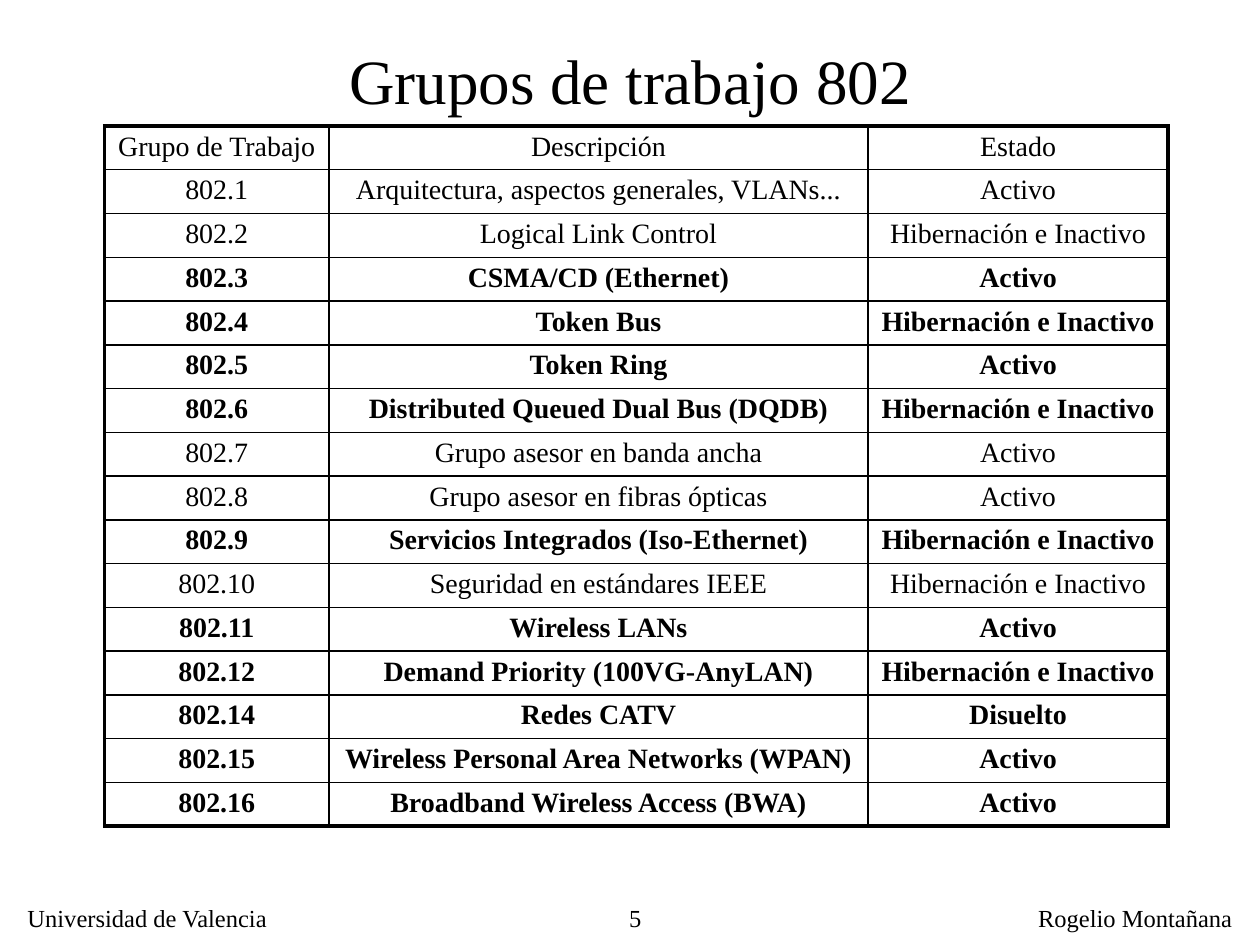
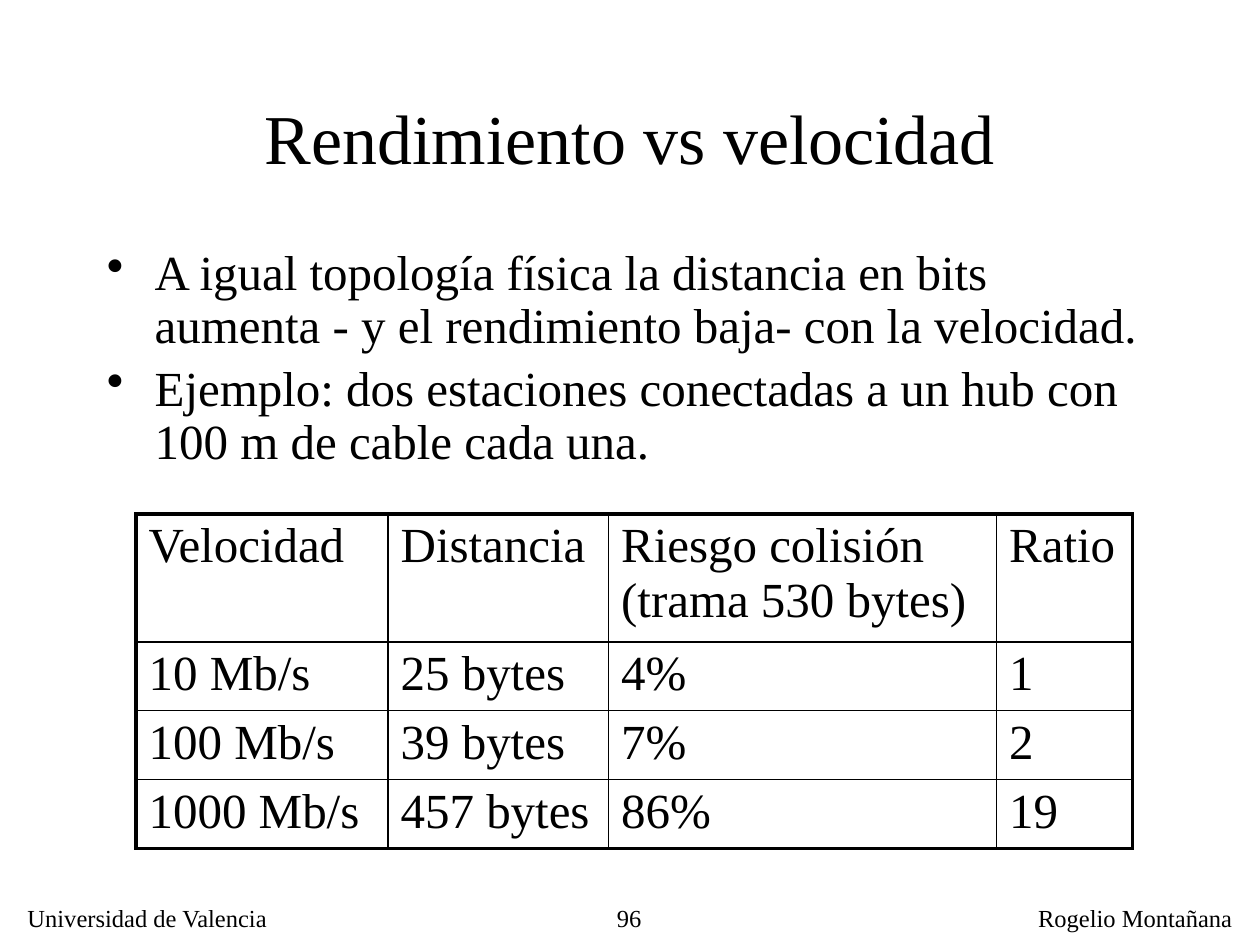
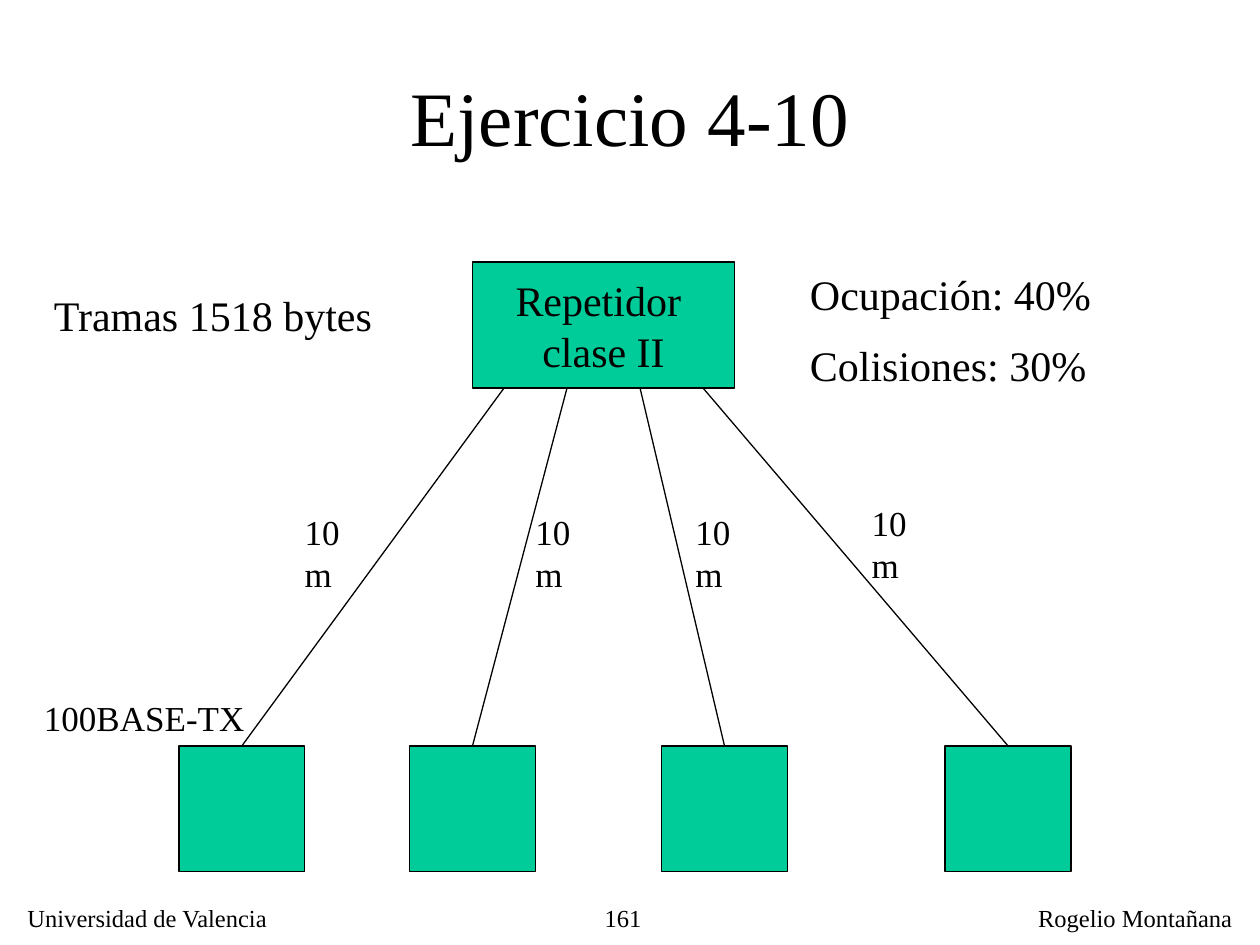
import pptx
import pptx.dml.color
import pptx.enum.shapes
import pptx.enum.text
import pptx.oxml.ns
import pptx.util
from lxml import etree

Inches, Pt = pptx.util.Inches, pptx.util.Pt
RGBColor = pptx.dml.color.RGBColor
PP_ALIGN = pptx.enum.text.PP_ALIGN
MSO_ANCHOR = pptx.enum.text.MSO_ANCHOR
qn = pptx.oxml.ns.qn

FONT = "Times New Roman"
BLACK = RGBColor(0x00, 0x00, 0x00)
GREEN = RGBColor(0x00, 0xCC, 0x99)
THIN, THICK = 1, 2.25

UNIVERSITY, AUTHOR = "Universidad de Valencia", "Rogelio Montañana"

ACTIVE, HIBERNATING = "Activo", "Hibernación e Inactivo"
GROUPS = [
    ("Grupo de Trabajo", "Descripción", "Estado"),
    ("802.1", "Arquitectura, aspectos generales, VLANs...", ACTIVE),
    ("802.2", "Logical Link Control", HIBERNATING),
    ("802.3", "CSMA/CD (Ethernet)", ACTIVE),
    ("802.4", "Token Bus", HIBERNATING),
    ("802.5", "Token Ring", ACTIVE),
    ("802.6", "Distributed Queued Dual Bus (DQDB)", HIBERNATING),
    ("802.7", "Grupo asesor en banda ancha", ACTIVE),
    ("802.8", "Grupo asesor en fibras ópticas", ACTIVE),
    ("802.9", "Servicios Integrados (Iso-Ethernet)", HIBERNATING),
    ("802.10", "Seguridad en estándares IEEE", HIBERNATING),
    ("802.11", "Wireless LANs", ACTIVE),
    ("802.12", "Demand Priority (100VG-AnyLAN)", HIBERNATING),
    ("802.14", "Redes CATV", "Disuelto"),
    ("802.15", "Wireless Personal Area Networks (WPAN)", ACTIVE),
    ("802.16", "Broadband Wireless Access (BWA)", ACTIVE),
]
PLAIN_GROUPS = {"Grupo de Trabajo", "802.1", "802.2", "802.7", "802.8", "802.10"}

BULLETS = [
    "A igual topología física la distancia en bits aumenta - y el rendimiento baja- con la velocidad.",
    "Ejemplo: dos estaciones conectadas a un hub con 100 m de cable cada una.",
]
SPEEDS = [
    ("Velocidad", "Distancia", "Riesgo colisión (trama 530 bytes)", "Ratio"),
    ("10 Mb/s", "25 bytes", "4%", "1"),
    ("100 Mb/s", "39 bytes", "7%", "2"),
    ("1000 Mb/s", "457 bytes", "86%", "19"),
]

REPEATER = ["Repetidor ", "clase II"]
# station left, cable end under the repeater, cable label left and top
STATIONS = [
    (1.42, 4, 2.32, 4),
    (3.25, 4.5, 4.15, 4),
    (5.25, 5.08, 5.42, 4),
    (7.5, 5.58, 6.82, 3.93),
]
STATION_TOP, REPEATER_BOTTOM = 5.92, 3.08


def write(tf, lines, size, align=PP_ALIGN.LEFT, bold=False, before=0):
    for i, line in enumerate(lines):
        p = tf.paragraphs[0] if i == 0 else tf.add_paragraph()
        p.alignment = align
        p.space_before = Pt(before)
        r = p.add_run()
        r.text = line
        r.font.name, r.font.size, r.font.bold = FONT, Pt(size), bold
        r.font.color.rgb = BLACK


def add_text(s, box, lines, size, wrap=False, anchor=MSO_ANCHOR.TOP, **style):
    tf = s.shapes.add_textbox(*map(Inches, box)).text_frame
    tf.word_wrap = wrap
    tf.vertical_anchor = anchor
    write(tf, lines, size, **style)
    return tf


def add_slide(prs, number, title, size, top, height):
    """Add a slide with its centred title and the footer."""
    s = prs.slides.add_slide(prs.slide_layouts[6])
    add_text(s, (4.13, 7.12, 1.06, 0.31), [number], 14, wrap=True, align=PP_ALIGN.RIGHT)
    add_text(s, (0.12, 7.12, 2.13, 0.33), [UNIVERSITY], 14)
    add_text(s, (8.14, 7.12, 1.74, 0.33), [AUTHOR], 14)
    add_text(s, (0.75, top, 8.5, height), [title], size, wrap=True,
             anchor=MSO_ANCHOR.MIDDLE, align=PP_ALIGN.CENTER)
    return s


def set_border(cell, side, width):
    ln = etree.SubElement(cell._tc.get_or_add_tcPr(), qn("a:ln" + side), w=str(Pt(width)))
    fill = etree.SubElement(ln, qn("a:solidFill"))
    etree.SubElement(fill, qn("a:srgbClr"), val=str(BLACK))


def add_grid(s, left, top, widths, heights, rows, size, align, bold_row):
    """Add an unfilled table with a thick frame and thin inner lines."""
    last_row, last_col = len(rows) - 1, len(widths) - 1
    table = s.shapes.add_table(len(rows), len(widths), Inches(left), Inches(top),
                               Inches(sum(widths)), Inches(sum(heights))).table
    table.first_row = table.horz_banding = False
    for column, width in zip(table.columns, widths):
        column.width = Inches(width)
    for row, height in zip(table.rows, heights):
        row.height = Inches(height)
    for i, row in enumerate(rows):
        for j, text in enumerate(row):
            cell = table.cell(i, j)
            cell.margin_top = cell.margin_bottom = Inches(0.04)
            write(cell.text_frame, [text], size, align, bold_row(row))
            edges = {"L": j == 0, "R": j == last_col, "T": i == 0, "B": i == last_row}
            for side, outer in edges.items():
                set_border(cell, side, THICK if outer else THIN)
            cell.fill.background()


def add_box(s, *box):
    sp = s.shapes.add_shape(pptx.enum.shapes.MSO_SHAPE.RECTANGLE, *map(Inches, box))
    sp.shadow.inherit = False
    sp.fill.solid()
    sp.fill.fore_color.rgb = GREEN
    sp.line.color.rgb = BLACK
    sp.line.width = Pt(0.75)
    return sp


def add_cable(s, station, x, y):
    """Draw a line from the top of a station to a point."""
    line = s.shapes.add_connector(pptx.enum.shapes.MSO_CONNECTOR.STRAIGHT,
                                  0, 0, Inches(x), Inches(y))
    line.begin_connect(station, 0)
    line.line.color.rgb = BLACK
    line.line.width = Pt(0.75)
    etree.SubElement(line._element.spPr, qn("a:effectLst"))


def build_groups(prs):
    s = add_slide(prs, "5", "Grupos de trabajo 802", 36, 0.42, 0.42)
    heights = [5.56 / len(GROUPS)] * len(GROUPS)
    add_grid(s, 0.83, 1, (1.78, 4.28, 2.38), heights, GROUPS, 16, PP_ALIGN.CENTER,
             lambda row: row[0] not in PLAIN_GROUPS)


def build_speeds(prs):
    s = add_slide(prs, "96", "Rendimiento vs velocidad", 40, 0.67, 0.83)
    tf = add_text(s, (0.75, 1.92, 8.5, 2), BULLETS, 28, wrap=True, before=5.6)
    for p in tf.paragraphs:
        p.line_spacing = 0.9
        pPr = p._p.get_or_add_pPr()
        pPr.set("marL", str(Inches(0.38)))
        pPr.set("indent", str(-Inches(0.38)))
        etree.SubElement(pPr, qn("a:buChar"), char="•")
    add_grid(s, 1.08, 4.08, (2, 1.75, 3.08, 1.08), (0.96, 0.53, 0.53, 0.53), SPEEDS, 28,
             PP_ALIGN.LEFT, lambda row: False)


def build_exercise(prs):
    s = add_slide(prs, "161", "Ejercicio 4-10", 44, 0.5, 0.83)
    tf = add_box(s, 3.75, 2.08, 2.08, 1).text_frame
    tf.word_wrap = False
    tf.vertical_anchor = MSO_ANCHOR.MIDDLE
    write(tf, REPEATER, 24, PP_ALIGN.CENTER)
    for left, cable_end, label_left, label_top in STATIONS:
        station = add_box(s, left, STATION_TOP, 1, 1)
        add_cable(s, station, cable_end, REPEATER_BOTTOM)
        add_text(s, (label_left, label_top, 0.76, 0.43), ["10 m"], 20)
    add_text(s, (0.25, 5.48, 1.79, 0.43), ["100BASE-TX"], 20)
    add_text(s, (6.33, 2.08, 2.67, 1.1), ["Ocupación: 40%", "Colisiones: 30%"], 24,
             wrap=True, before=12)
    add_text(s, (0.33, 2.25, 2.83, 0.5), ["Tramas 1518 bytes"], 24, wrap=True, before=12)


def main():
    prs = pptx.Presentation()
    prs.slide_width, prs.slide_height = Inches(10), Inches(7.5)
    build_groups(prs)
    build_speeds(prs)
    build_exercise(prs)
    prs.save("out.pptx")


if __name__ == "__main__":
    main()
